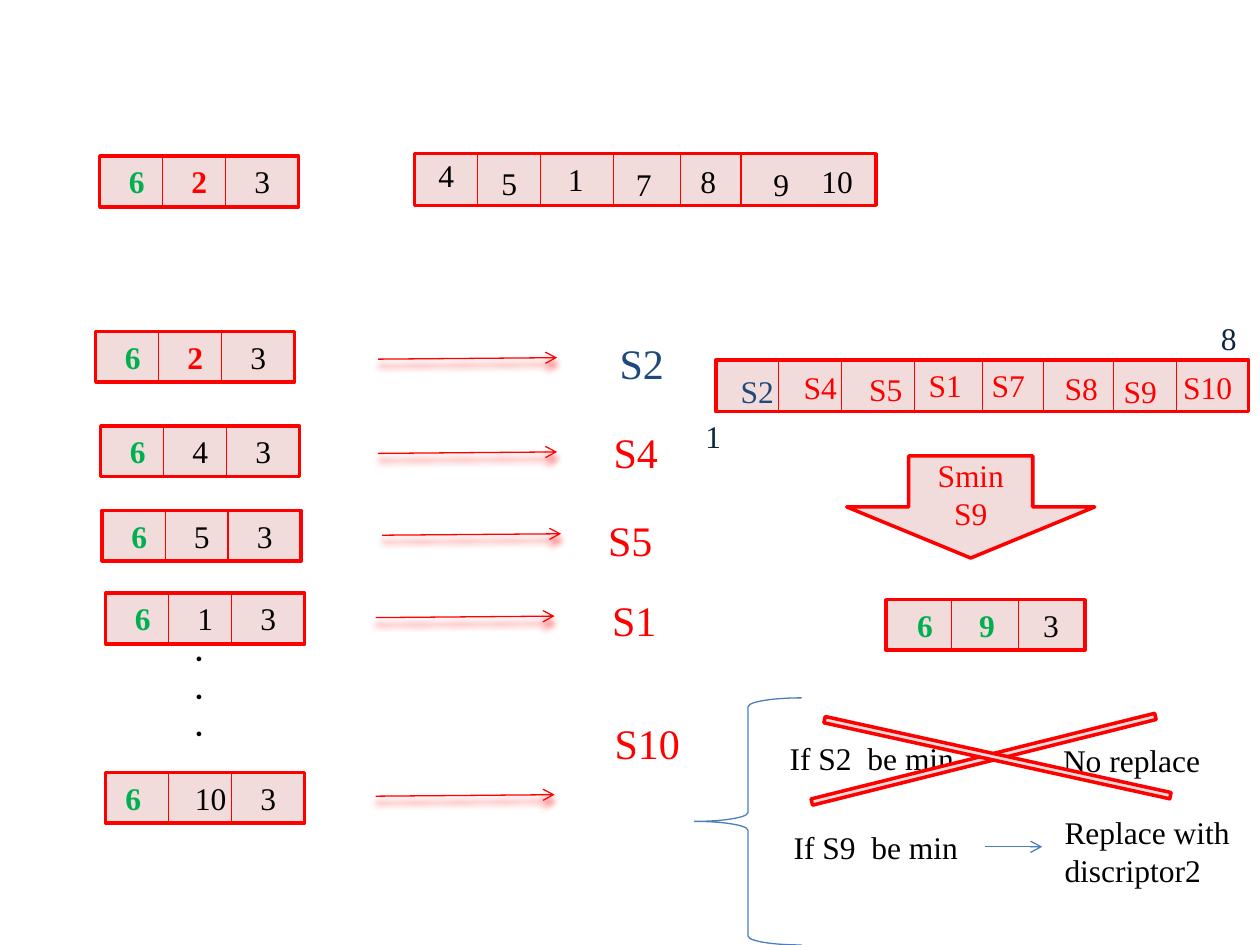
import pptx
import pptx.dml.color
import pptx.enum.shapes
import pptx.enum.text
import pptx.oxml
import pptx.util
from pptx.util import Cm

SHAPES = pptx.enum.shapes.MSO_SHAPE
rgb = pptx.dml.color.RGBColor.from_string
RED, GREEN, NAVY, BLUE, BLACK, PINK = "FF0000", "00B050", "1F497D", "4B7EBC", "000000", "F2DCDB"
NS = 'xmlns:a="http://schemas.openxmlformats.org/drawingml/2006/main"'
GLOW = ('<a:outerShdw blurRad="50800" dist="50800" dir="5400000" algn="ctr" rotWithShape="0">'
        f'<a:srgbClr val="{RED}"/></a:outerShdw>')

prs = pptx.Presentation()
prs.slide_width, prs.slide_height = Cm(25.4), Cm(19.05)
slide = prs.slides.add_slide(prs.slide_layouts[6])
shapes = slide.shapes


def add_label(text, x, y, color=BLACK, size=18, bold=False, width=None, font="Times New Roman"):
    # Side insets plus an average character width that grows with the text size
    width = width or 0.56 + 0.33 * len(text) * size / 18
    label = shapes.add_textbox(Cm(x), Cm(y), Cm(width), Cm(1.02 if size == 18 else 1.28))
    frame = label.text_frame
    frame.word_wrap = False
    frame.auto_size = pptx.enum.text.MSO_AUTO_SIZE.SHAPE_TO_FIT_TEXT
    frame.text = text
    for paragraph in frame.paragraphs:
        for run in paragraph.runs:
            run.font.name, run.font.size, run.font.bold = font, pptx.util.Pt(size), bold
            run.font.color.rgb = rgb(color)


def add_line(x1, y1, x2, y2, color=RED, arrow=False, effect=""):
    line = shapes.add_connector(pptx.enum.shapes.MSO_CONNECTOR.STRAIGHT,
                                Cm(x1), Cm(y1), Cm(x2), Cm(y2))
    line.line.color.rgb = rgb(color)
    line.line.width = pptx.util.Pt(0.75)
    if arrow:
        line.line._get_or_add_ln().append(pptx.oxml.parse_xml(f'<a:tailEnd {NS} type="arrow"/>'))
    line._element.spPr.append(pptx.oxml.parse_xml(f"<a:effectLst {NS}>{effect}</a:effectLst>"))


pink_shapes = []

# Three-cell subsets: left, top, divider offsets, cells as (text, offset, colour)
DIVIDERS = (1.27, 2.54)
subsets = [
    (x, y, DIVIDERS, [("6", 0.34, GREEN), (middle, 1.6, color), ("3", 2.87, BLACK)])
    for x, y, middle, color in [
        (2.01, 3.15, "2", RED), (1.93, 6.68, "2", RED), (2.03, 8.59, "4", BLACK),
        (2.06, 10.29, "5", BLACK), (2.13, 11.96, "1", BLACK)]
]
subsets += [
    (2.13, 15.57, DIVIDERS, [("6", 0.15, GREEN), ("10", 1.55, BLACK), ("3", 2.87, BLACK)]),
    (17.86, 12.09, (1.32, 2.67), [("6", 0.38, GREEN), ("9", 1.63, GREEN), ("3", 2.92, BLACK)]),
]
for left, top, dividers, cells in subsets:
    pink_shapes.append(shapes.add_shape(SHAPES.RECTANGLE, Cm(left), Cm(top), Cm(4.01), Cm(1.02)))
    for offset in dividers:
        add_line(left + offset, top - 0.02, left + offset, top + 1.03)
    for text, offset, color in cells:
        add_label(text, left + offset, top, color, bold=color != BLACK)

# Long strips: remaining descriptors and their scores
strips = [
    (8.36, 3.1, 9.3, [9.63, 10.9, 12.37, 13.72, 14.94], BLACK,
     [("4", 8.59, 3.02), ("5", 9.86, 3.18), ("1", 11.2, 3.1), ("7", 12.57, 3.2),
      ("8", 13.87, 3.15), ("9", 15.34, 3.2), ("10", 16.31, 3.15)]),
    (14.43, 7.26, 10.74, [15.7, 16.97, 18.44, 19.81, 21.03, 22.45, 23.72], RED,
     [("S2", 14.68, 7.37), ("S4", 15.95, 7.29), ("S5", 17.27, 7.34), ("S1", 18.47, 7.26),
      ("S7", 19.74, 7.26), ("S8", 21.21, 7.32), ("S9", 22.4, 7.37), ("S10", 23.6, 7.29)]),
]
for left, top, width, dividers, color, cells in strips:
    pink_shapes.append(shapes.add_shape(SHAPES.RECTANGLE, Cm(left), Cm(top), Cm(width), Cm(1.04)))
    for x in dividers:
        add_line(x, top - 0.03, x, top + 1.04)
    for text, x, y in cells:
        add_label(text, x, y, NAVY if text == "S2" else color)
add_label("1", 13.97, 8.28, "0F243E")
add_label("8", 24.36, 6.3, "0F243E")

# Arrows from each subset to its score
for x, y in [(7.62, 7.24), (7.62, 9.14), (7.7, 10.79), (7.57, 12.45), (7.57, 16.05)]:
    add_line(x, y, x + 3.61, y - 0.03, arrow=True, effect=GLOW)
for score, x, y in [("S2", 12.24, 6.68), ("S4", 12.12, 8.48), ("S5", 12.01, 10.24),
                    ("S1", 12.09, 11.86), ("S10", 12.14, 14.33)]:
    add_label(score, x, y, NAVY if score == "S2" else RED, size=24)
add_label(".\n.\n.", 3.68, 12.57, bold=True, width=0.69, font="Calibri")

# Minimum score
minimum = shapes.add_shape(SHAPES.DOWN_ARROW, Cm(17.07), Cm(9.19), Cm(5), Cm(2.06))
minimum.text_frame.text = "Smin\nS9"
for paragraph in minimum.text_frame.paragraphs:
    paragraph.alignment = pptx.enum.text.PP_ALIGN.CENTER
    font = paragraph.runs[0].font
    font.name, font.size = "Times New Roman", pptx.util.Pt(18)
    font.color.rgb = rgb(RED)
pink_shapes.append(minimum)

# Replacement rules
brace = shapes.add_shape(SHAPES.LEFT_BRACE, Cm(14), Cm(14.07), Cm(2.16), Cm(4.98))
brace.shadow.inherit = False
brace.fill.background()
brace.line.color.rgb = rgb(BLUE)
brace.line.width = pptx.util.Pt(0.75)
for text, x, y, width in [("If S2  be min", 15.67, 14.78, 3.86), ("No replace", 21.18, 14.81, 3.33),
                          ("If S9  be min", 15.75, 16.56, 3.86),
                          ("Replace with\ndiscriptor2", 21.21, 16.26, 3.86)]:
    add_label(text, x, y, width=width)
add_line(19.86, 17.07, 21.01, 17.07, BLUE, arrow=True)

# Cross over the rejected rule
for x, y, angle in [(16.26, 15.24, 346), (16.54, 15.21, 12.4)]:
    bar = shapes.add_shape(SHAPES.RECTANGLE, Cm(x), Cm(y), Cm(7.14), Cm(0.13))
    bar.rotation = angle
    pink_shapes.append(bar)

# Shared look of the pink shapes
for shape in pink_shapes:
    shape.shadow.inherit = False
    shape.fill.solid()
    shape.fill.fore_color.rgb = rgb(PINK)
    shape.line.color.rgb = rgb(RED)
    shape.line.width = pptx.util.Pt(2)

prs.save("out.pptx")
